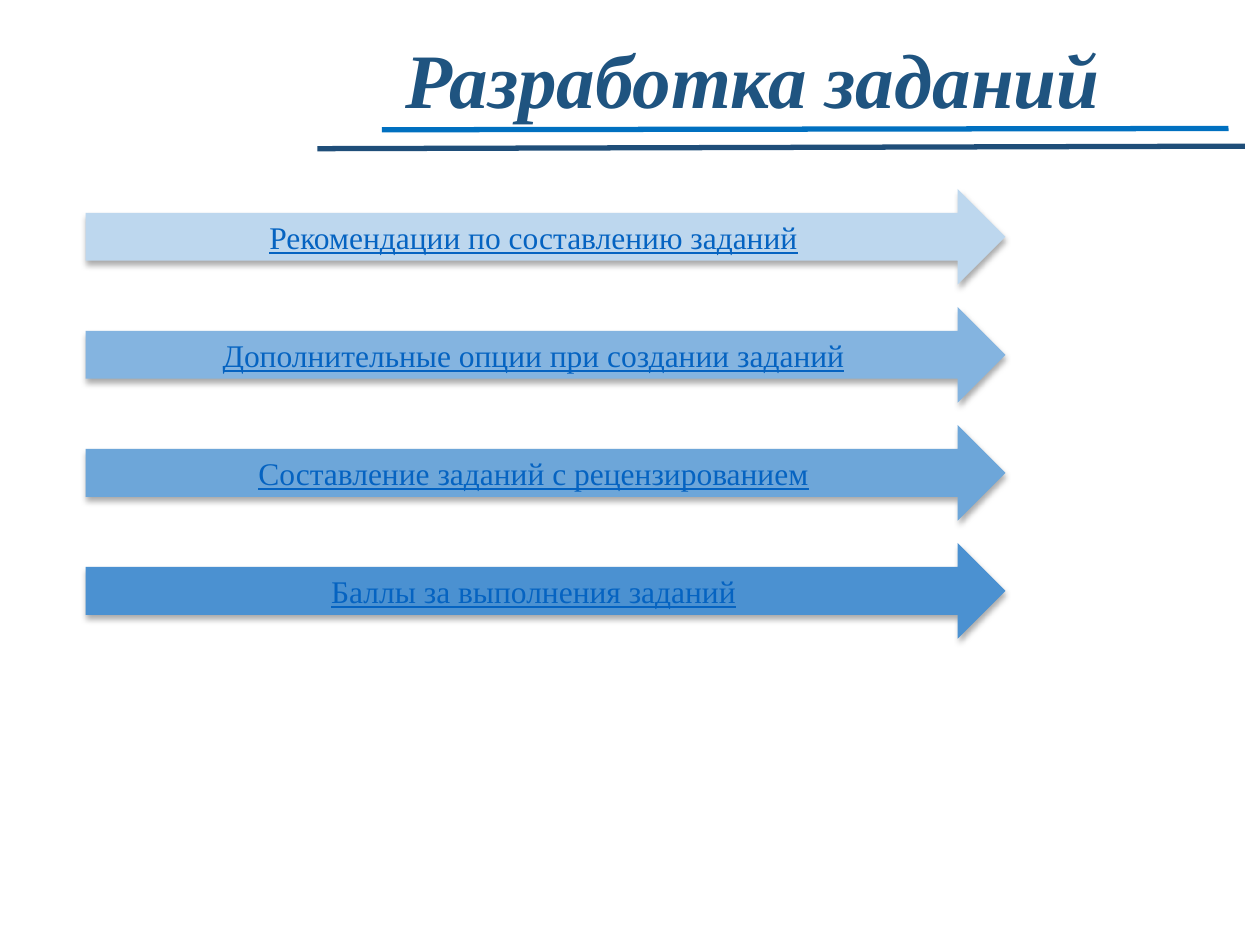
import dataclasses

import lxml.etree
import pptx
import pptx.dml.color
import pptx.enum.shapes
import pptx.enum.text
import pptx.oxml
import pptx.oxml.ns
import pptx.util

Inches = pptx.util.Inches
Pt = pptx.util.Pt
qn = pptx.oxml.ns.qn


@dataclasses.dataclass(frozen=True)
class Theme:
    font: str = "Times New Roman"
    title: str = "1F5480"
    link: str = "0563C1"
    rules: tuple = ("0070C0", "1F4E79")
    fills: tuple = ("BDD7EE", "84B4E0", "6DA6D9", "4B91D1")
    big: int = 44
    body: int = 18
    rule: int = 3


THEME = Theme()
TOPICS = (
    "Рекомендации по составлению заданий",
    "Дополнительные опции при создании заданий",
    "Составление заданий с рецензированием",
    "Баллы за выполнения заданий",
)


def rgb(code):
    return pptx.dml.color.RGBColor.from_string(code)


def write(shape, text, size, color, align):
    frame = shape.text_frame
    frame.word_wrap = True
    frame.vertical_anchor = pptx.enum.text.MSO_ANCHOR.MIDDLE
    frame.text = text
    para = frame.paragraphs[0]
    para.alignment = align
    font = para.runs[0].font
    font.name = THEME.font
    font.size = Pt(size)
    font.color.rgb = rgb(color)
    return para


def cast(shape):
    """Give the shape a soft shadow that falls straight down."""
    shape.shadow.inherit = False
    effects = shape._element.spPr.find(qn("a:effectLst"))
    effects.append(pptx.oxml.parse_xml(
        '<a:outerShdw xmlns:a="http://schemas.openxmlformats.org/drawingml/2006/main"'
        f' blurRad="{Pt(3.5)}" dist="{Pt(2.2)}" dir="5400000" rotWithShape="0">'
        '<a:srgbClr val="000000"><a:alpha val="32000"/></a:srgbClr></a:outerShdw>'))


def add_title(slide, left, top, width, height):
    box = slide.shapes.add_textbox(
        Inches(left), Inches(top), Inches(width), Inches(height))
    para = write(box, "Разработка заданий", THEME.big, THEME.title,
                 pptx.enum.text.PP_ALIGN.LEFT)
    para.line_spacing = 0.9
    font = para.runs[0].font
    font.bold = font.italic = True


def add_rule(slide, start, end, color):
    line = slide.shapes.add_connector(
        pptx.enum.shapes.MSO_CONNECTOR.STRAIGHT,
        *(Inches(n) for n in start + end))
    line.line.color.rgb = rgb(color)
    line.line.width = Pt(THEME.rule)
    lxml.etree.SubElement(line._element.spPr, qn("a:effectLst"))


def add_topics(slide, left, top, width, height, tall=0.76):
    """Spread the topic arrows evenly from the top to the foot of the box."""
    step = (height - tall) / (len(TOPICS) - 1)
    for row, (text, fill) in enumerate(zip(TOPICS, THEME.fills)):
        arrow = slide.shapes.add_shape(
            pptx.enum.shapes.MSO_SHAPE.RIGHT_ARROW, Inches(left),
            Inches(top + row * step), Inches(width), Inches(tall))
        arrow.fill.solid()
        arrow.fill.fore_color.rgb = rgb(fill)
        arrow.line.fill.background()
        cast(arrow)
        para = write(arrow, text, THEME.body, THEME.link,
                     pptx.enum.text.PP_ALIGN.CENTER)
        para.runs[0].font.underline = True


def main():
    deck = pptx.Presentation()
    deck.slide_width = Inches(10)
    deck.slide_height = Inches(7.5)
    slide = deck.slides.add_slide(deck.slide_layouts[6])
    add_title(slide, 3.12, 0.17, 6.88, 0.98)
    add_rule(slide, (3.03, 1.03), (9.75, 1.02), THEME.rules[0])
    add_rule(slide, (2.52, 1.18), (9.88, 1.16), THEME.rules[1])
    add_topics(slide, 0.68, 1.5, 7.3, 3.57)
    deck.save("out.pptx")


if __name__ == "__main__":
    main()
